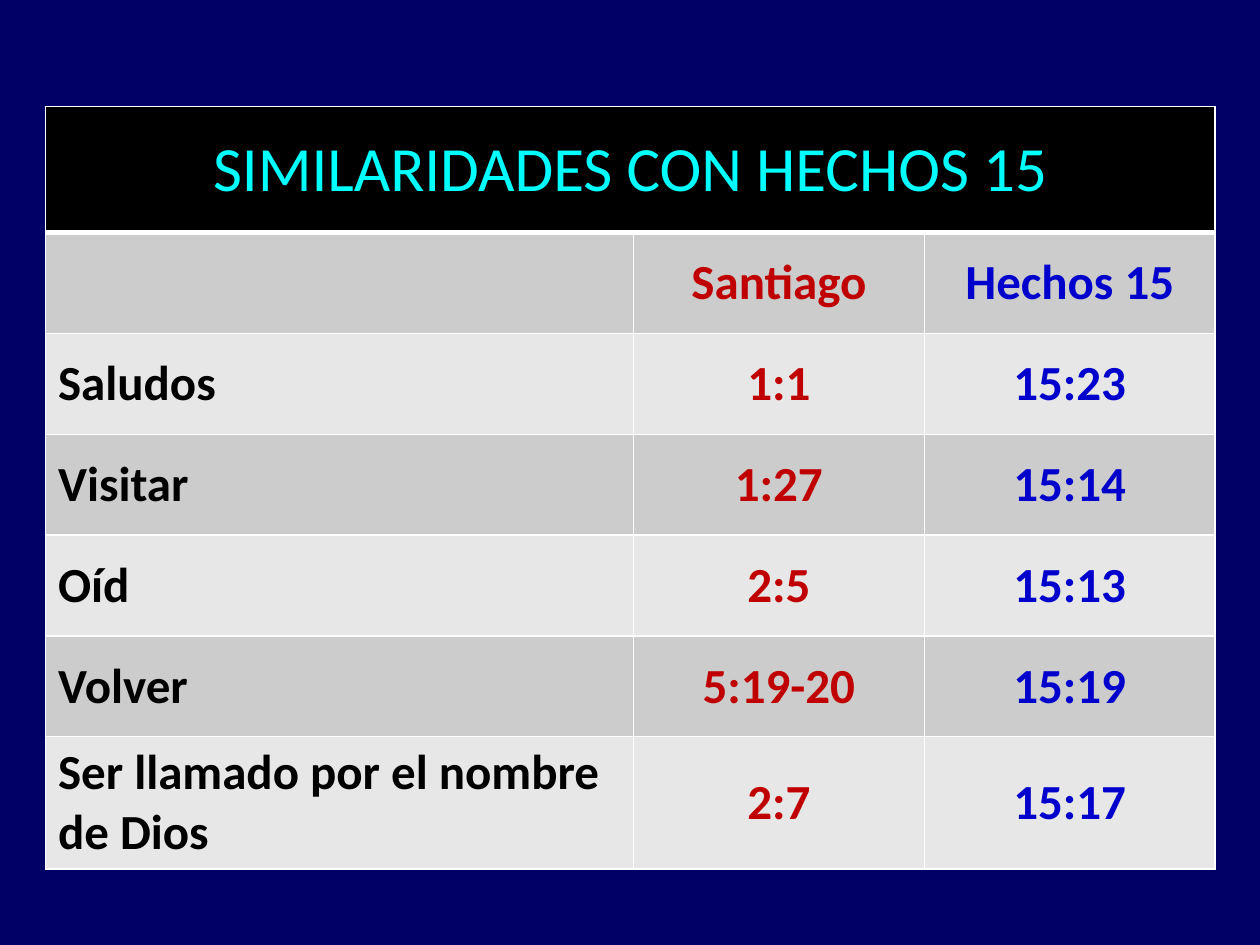
from dataclasses import dataclass

from lxml import etree
from pptx import Presentation
from pptx.dml.color import RGBColor
from pptx.enum.text import MSO_ANCHOR, PP_ALIGN
from pptx.oxml.ns import qn
from pptx.table import Table, _Cell
from pptx.util import Pt

LEFT, CENTER = PP_ALIGN.LEFT, PP_ALIGN.CENTER
MIDDLE = MSO_ANCHOR.MIDDLE


@dataclass(frozen=True)
class Theme:
    font: str = "Calibri"
    title_size: float = 36
    body_size: float = 28
    background: str = "000066"
    title_fill: str = "000000"
    title_text: str = "00FFFF"
    bands: tuple[str, str] = ("CCCCCC", "E7E7E7")
    columns: tuple[str, str, str] = ("000000", "C00000", "0000CC")
    border: str = "FFFFFF"
    thin: float = 1
    thick: float = 3


@dataclass(frozen=True)
class Parallel:
    topic: str
    santiago: str
    hechos: str


THEME = Theme()
TITLE = "SIMILARIDADES CON HECHOS 15"
PARALLELS = [
    Parallel("", "Santiago", "Hechos 15"),
    Parallel("Saludos", "1:1", "15:23"),
    Parallel("Visitar", "1:27", "15:14"),
    Parallel("Oíd", "2:5", "15:13"),
    Parallel("Volver", "5:19-20", "15:19"),
    Parallel("Ser llamado por el nombre de Dios", "2:7", "15:17"),
]
TABLE_LEFT, TABLE_TOP = 26, 61
COLUMN_WIDTHS = [336, 166.2, 166.2]
ROW_HEIGHTS = [72] + [57.6] * 5 + [75.5]


def write(cell: _Cell, text: str, *, color: str, size: float = THEME.body_size,
          bold: bool = True, align: PP_ALIGN = CENTER) -> None:
    cell.vertical_anchor = MIDDLE
    p = cell.text_frame.paragraphs[0]
    p.alignment = align
    p.font.size = Pt(size)
    if text:
        r = p.add_run()
        r.text = text
        r.font.name = THEME.font
        r.font.size = Pt(size)
        r.font.bold = bold
        r.font.color.rgb = RGBColor.from_string(color)


def paint(cell: _Cell, fill: str, *, top: float = THEME.thin,
          bottom: float = THEME.thin) -> None:
    cell.fill.solid()
    cell.fill.fore_color.rgb = RGBColor.from_string(fill)
    tc_pr = cell._tc.get_or_add_tcPr()
    edges = {"a:lnL": THEME.thin, "a:lnR": THEME.thin, "a:lnT": top, "a:lnB": bottom}
    for i, (tag, width) in enumerate(edges.items()):
        ln = etree.Element(qn(tag), w=str(Pt(width)))
        solid = etree.SubElement(ln, qn("a:solidFill"))
        etree.SubElement(solid, qn("a:srgbClr"), val=THEME.border)
        tc_pr.insert(i, ln)


def draw_title(table: Table) -> None:
    for cell in table.rows[0].cells:
        paint(cell, THEME.title_fill, bottom=THEME.thick)
    table.cell(0, 0).merge(table.cell(0, len(COLUMN_WIDTHS) - 1))
    write(table.cell(0, 0), TITLE, color=THEME.title_text,
          size=THEME.title_size, bold=False)


def draw_parallel(table: Table, row: int, item: Parallel) -> None:
    texts = (item.topic, item.santiago, item.hechos)
    for col, (text, color) in enumerate(zip(texts, THEME.columns)):
        cell = table.cell(row, col)
        paint(cell, THEME.bands[(row - 1) % 2],
              top=THEME.thick if row == 1 else THEME.thin)
        write(cell, text, color=color, align=CENTER if col else LEFT)


def main() -> None:
    prs = Presentation()
    prs.slide_width, prs.slide_height = Pt(720), Pt(540)
    s = prs.slides.add_slide(prs.slide_layouts[6])
    s.background.fill.solid()
    s.background.fill.fore_color.rgb = RGBColor.from_string(THEME.background)

    table = s.shapes.add_table(
        len(ROW_HEIGHTS), len(COLUMN_WIDTHS), Pt(TABLE_LEFT), Pt(TABLE_TOP),
        Pt(sum(COLUMN_WIDTHS)), Pt(sum(ROW_HEIGHTS))).table
    for column, width in zip(table.columns, COLUMN_WIDTHS):
        column.width = Pt(width)
    for row, height in zip(table.rows, ROW_HEIGHTS):
        row.height = Pt(height)

    draw_title(table)
    for row, item in enumerate(PARALLELS, start=1):
        draw_parallel(table, row, item)
    prs.save("out.pptx")


if __name__ == "__main__":
    main()
